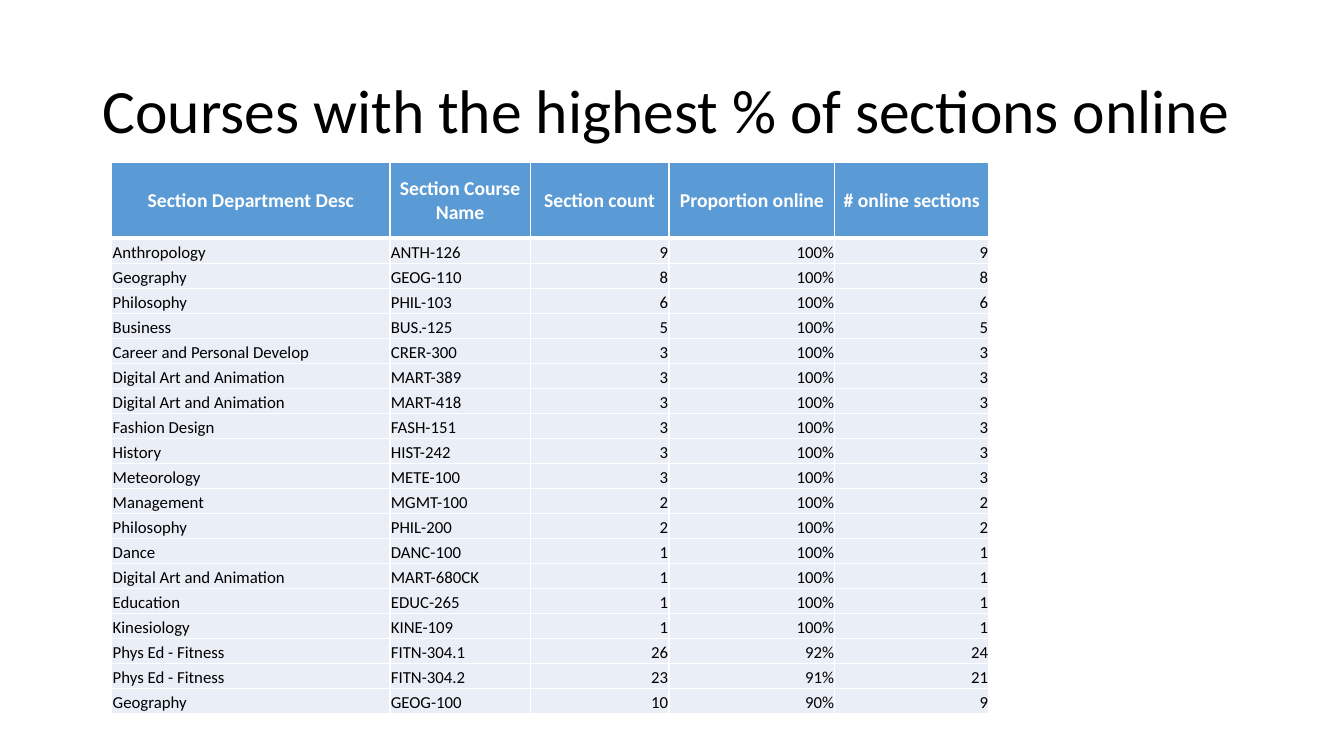
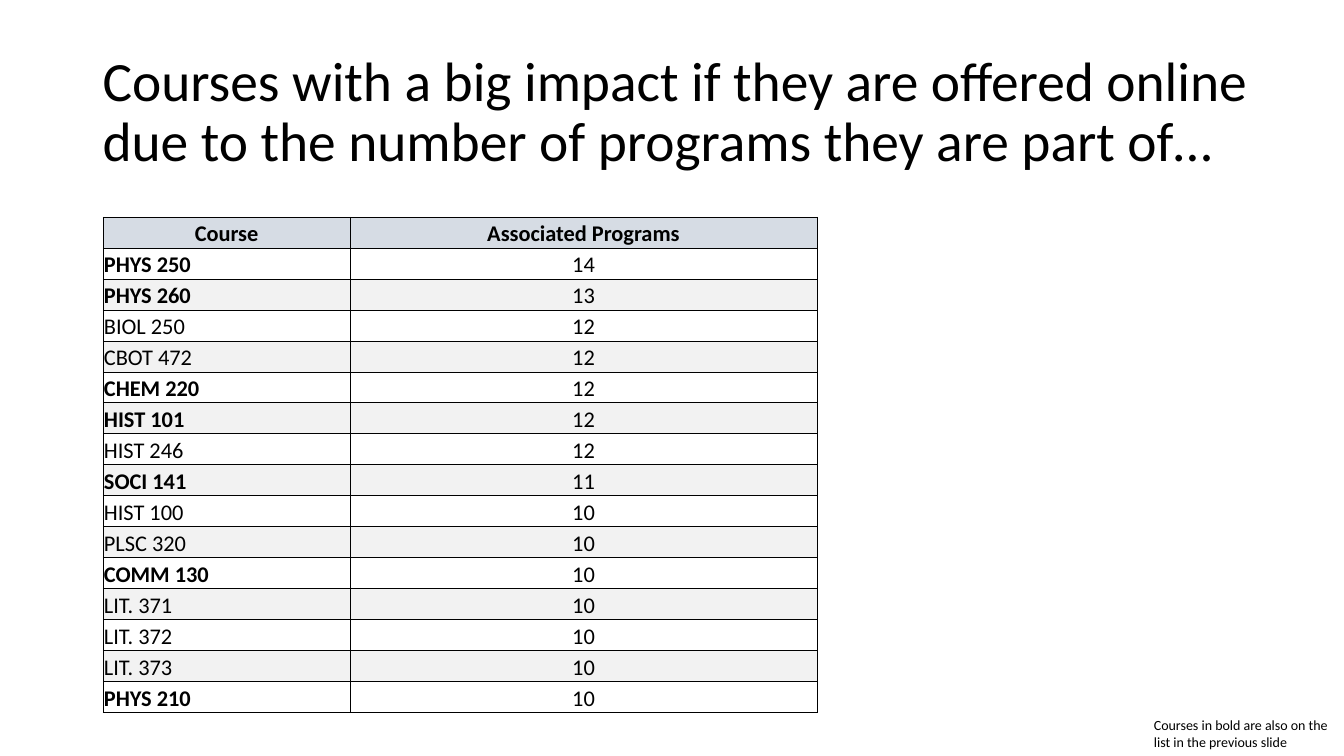
from dataclasses import dataclass

from lxml import etree
from pptx import Presentation
from pptx.dml.color import RGBColor
from pptx.enum import text
from pptx.oxml.ns import qn
from pptx.util import Cm, Pt


@dataclass(frozen=True)
class Theme:
    font: str = "Calibri"
    black: str = "000000"
    white: str = "FFFFFF"
    blue: str = "5B9BD5"
    pale_blue: str = "EAEFF7"
    steel: str = "D6DCE4"
    pale_grey: str = "F2F2F2"
    title_size: float = 44
    long_title_size: float = 39.6
    large_size: float = 16
    header_size: float = 14
    body_size: float = 12
    note_size: float = 10


theme = Theme()
LEFT, CENTER, RIGHT = text.PP_ALIGN.LEFT, text.PP_ALIGN.CENTER, text.PP_ALIGN.RIGHT
MIDDLE, BOTTOM = text.MSO_ANCHOR.MIDDLE, text.MSO_ANCHOR.BOTTOM


def format_text(frame, size, color=theme.black, bold=False, align=LEFT):
    """Give every paragraph of a text frame the same look."""
    for para in frame.paragraphs:
        para.alignment = align
        para.font.name = theme.font
        para.font.size = Pt(size)
        para.font.bold = bold
        para.font.color.rgb = RGBColor.from_string(color)


def add_grid(slide, left, top, widths, heights, rows, style):
    """Add a table; style(row, column) gives text format, anchor, fill and borders.

    Borders are a colour and the widths in points above and below the cell.
    """
    frame = slide.shapes.add_table(len(rows), len(widths), Cm(left), Cm(top),
                                   Cm(sum(widths)), Cm(sum(heights)))
    table = frame.table
    table.first_row = table.horz_banding = False
    for column, width in zip(table.columns, widths):
        column.width = Cm(width)
    for row_index, (row, height) in enumerate(zip(rows, heights)):
        table.rows[row_index].height = Cm(height)
        for column_index, value in enumerate(row):
            cell = table.cell(row_index, column_index)
            look, anchor, fill, (color, side, above, below) = style(row_index, column_index)
            cell.text = value
            format_text(cell.text_frame, **look)
            cell.vertical_anchor = anchor
            cell.margin_left = cell.margin_right = cell.margin_top = Cm(0.02)
            cell.margin_bottom = 0
            properties = cell._tc.get_or_add_tcPr()
            for edge, points in (("L", side), ("R", side), ("T", above), ("B", below)):
                line = etree.SubElement(properties, qn(f"a:ln{edge}"), w=str(Pt(points)))
                solid = etree.SubElement(line, qn("a:solidFill"))
                etree.SubElement(solid, qn("a:srgbClr"), val=color)
            cell.fill.solid()
            cell.fill.fore_color.rgb = RGBColor.from_string(fill)


deck = Presentation()
deck.slide_width, deck.slide_height = Cm(33.87), Cm(19.05)

# Titles
slides = []
for title_text, width, size in (
    ("Courses with the highest % of sections online", 29.21, theme.title_size),
    ("Courses with a big impact if they are offered online due to the number of "
     "programs they are part of…", 29.82, theme.long_title_size),
):
    slide = deck.slides.add_slide(deck.slide_layouts[5])
    title = slide.shapes.title
    title.left, title.top, title.width, title.height = Cm(2.33), Cm(1.01), Cm(width), Cm(3.68)
    title.text_frame.text = title_text
    title.text_frame.auto_size = text.MSO_AUTO_SIZE.NONE
    title.text_frame.vertical_anchor = MIDDLE
    title.text_frame.paragraphs[0].line_spacing = 0.9
    format_text(title.text_frame, size)
    slides.append(slide)
online_slide, impact_slide = slides

# Online sections
online_rows = [
    ("Section Department Desc", "Section Course Name", "Section count",
     "Proportion online", "# online sections"),
    ("Anthropology", "ANTH-126", "9", "100%", "9"),
    ("Geography", "GEOG-110", "8", "100%", "8"),
    ("Philosophy", "PHIL-103", "6", "100%", "6"),
    ("Business", "BUS.-125", "5", "100%", "5"),
    ("Career and Personal Develop", "CRER-300", "3", "100%", "3"),
    ("Digital Art and Animation", "MART-389", "3", "100%", "3"),
    ("Digital Art and Animation", "MART-418", "3", "100%", "3"),
    ("Fashion Design", "FASH-151", "3", "100%", "3"),
    ("History", "HIST-242", "3", "100%", "3"),
    ("Meteorology", "METE-100", "3", "100%", "3"),
    ("Management", "MGMT-100", "2", "100%", "2"),
    ("Philosophy", "PHIL-200", "2", "100%", "2"),
    ("Dance", "DANC-100", "1", "100%", "1"),
    ("Digital Art and Animation", "MART-680CK", "1", "100%", "1"),
    ("Education", "EDUC-265", "1", "100%", "1"),
    ("Kinesiology", "KINE-109", "1", "100%", "1"),
    ("Phys Ed - Fitness", "FITN-304.1", "26", "92%", "24"),
    ("Phys Ed - Fitness", "FITN-304.2", "23", "91%", "21"),
    ("Geography", "GEOG-100", "10", "90%", "9"),
]
header_look = dict(size=theme.header_size, color=theme.white, bold=True, align=CENTER)
add_grid(
    online_slide, 2.82, 4.1, [7.01, 3.53, 3.5, 4.18, 3.88],
    [1.9] + [0.63] * (len(online_rows) - 1), online_rows,
    lambda row, column:
        (header_look, MIDDLE, theme.blue, (theme.white, 1, 1, 3)) if row == 0 else
        (dict(size=theme.body_size, align=LEFT if column < 2 else RIGHT), BOTTOM,
         theme.pale_blue, (theme.white, 1, 3 if row == 1 else 1, 1)),
)

# Associated programs
program_rows = [
    ("Course", "Associated Programs"),
    ("PHYS 250", "14"), ("PHYS 260", "13"), ("BIOL 250", "12"), ("CBOT 472", "12"),
    ("CHEM 220", "12"), ("HIST 101", "12"), ("HIST 246", "12"), ("SOCI 141", "11"),
    ("HIST 100", "10"), ("PLSC 320", "10"), ("COMM 130", "10"), ("LIT. 371", "10"),
    ("LIT. 372", "10"), ("LIT. 373", "10"), ("PHYS 210", "10"),
]
bold_courses = {"PHYS 250", "PHYS 260", "CHEM 220", "HIST 101", "SOCI 141", "COMM 130",
                "PHYS 210"}
band_fills = (theme.pale_grey, theme.white)
add_grid(
    impact_slide, 2.6, 5.47, [6.22, 11.77], [0.78] * len(program_rows), program_rows,
    lambda row, column: (
        dict(size=theme.large_size,
             bold=row == 0 or program_rows[row][column] in bold_courses,
             align=LEFT if row and column == 0 else CENTER),
        BOTTOM, band_fills[row % 2] if row else theme.steel, (theme.black, 0.5, 0.5, 0.5)),
)

note = impact_slide.shapes.add_textbox(Cm(28.83), Cm(17.93), Cm(5.04), Cm(1.12))
note.text_frame.word_wrap = True
note.text_frame.text = "Courses in bold are also on the list in the previous slide"
format_text(note.text_frame, theme.note_size)

deck.save("out.pptx")
